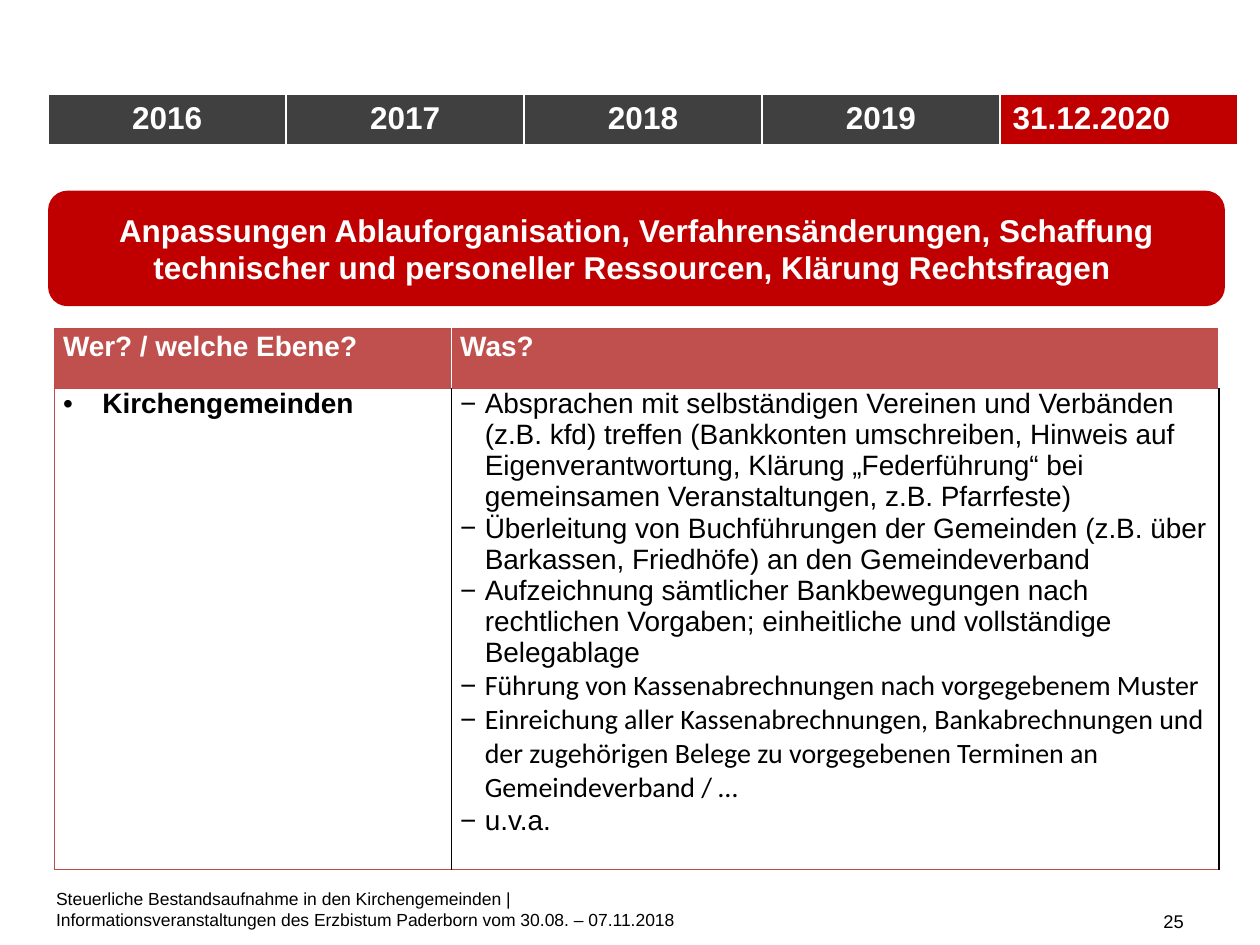
from lxml.etree import SubElement
from pptx import Presentation
from pptx.dml.color import RGBColor
from pptx.enum.shapes import MSO_SHAPE as Shape
from pptx.enum.text import MSO_ANCHOR as Anchor, PP_ALIGN as Align
from pptx.oxml import parse_xml
from pptx.oxml.ns import nsdecls, qn
from pptx.util import Pt

WHITE, BLACK, RED, GREY = "FFFFFF", "000000", "C00000", "404040"
HEADER_RED, RULE_RED = "C0504D", "BF4C48"

YEARS = ["2016", "2017", "2018", "2019", "31.12.2020"]
BANNER = ("Anpassungen Ablauforganisation, Verfahrensänderungen, Schaffung "
          "technischer und personeller Ressourcen, Klärung Rechtsfragen ")
HEADINGS = ["Wer? / welche Ebene?", "Was?"]
LEVEL = "Kirchengemeinden"
TASKS = [
    ("Absprachen mit selbständigen Vereinen und Verbänden (z.B. kfd) treffen "
     "(Bankkonten umschreiben, Hinweis auf Eigenverantwortung, Klärung „Federführung“ "
     "bei gemeinsamen Veranstaltungen, z.B. Pfarrfeste)", "Arial"),
    ("Überleitung von Buchführungen der Gemeinden (z.B. über Barkassen, Friedhöfe) "
     "an den Gemeindeverband", "Arial"),
    ("Aufzeichnung sämtlicher Bankbewegungen nach rechtlichen Vorgaben; "
     "einheitliche und vollständige Belegablage", "Arial"),
    ("Führung von Kassenabrechnungen nach vorgegebenem Muster", "Calibri"),
    ("Einreichung aller Kassenabrechnungen, Bankabrechnungen und der zugehörigen "
     "Belege zu vorgegebenen Terminen an Gemeindeverband / …", "Calibri"),
    ("u.v.a.", "Arial"),
]
FOOTER = ("Steuerliche Bestandsaufnahme in den Kirchengemeinden |\v"
          "Informationsveranstaltungen des Erzbistum Paderborn vom 30.08. – 07.11.2018")
PAGE = "25"


def rgb(value):
    return RGBColor.from_string(value)


def style(paragraph, size, color, bold=False, font="Arial", align=Align.LEFT):
    paragraph.alignment = align
    for run in paragraph.runs:
        run.font.name, run.font.size, run.font.bold = font, Pt(size), bold
        run.font.color.rgb = rgb(color)


def bullet(paragraph, char, indent):
    props = paragraph._p.get_or_add_pPr()
    props.set("marL", str(Pt(indent)))
    props.set("indent", str(-Pt(indent)))
    SubElement(props, qn("a:buFont"), typeface="Arial")
    SubElement(props, qn("a:buChar"), char=char)


def paint(cell, color, **borders):
    cell.fill.solid()
    cell.fill.fore_color.rgb = rgb(color)
    props = cell._tc.get_or_add_tcPr()
    for place, (side, (line, width)) in enumerate(borders.items()):
        props.insert(place, parse_xml(
            f'<a:ln{side} {nsdecls("a")} w="{Pt(width)}"><a:solidFill>'
            f'<a:srgbClr val="{line}"/></a:solidFill></a:ln{side}>'))


def pad(cell, bottom):
    cell.margin_left = cell.margin_right = Pt(5)
    cell.margin_top, cell.margin_bottom = Pt(0), Pt(bottom)


def add_table(slide, left, top, widths, heights):
    table = slide.shapes.add_table(
        len(heights), len(widths), Pt(left), Pt(top), Pt(sum(widths)), Pt(sum(heights))).table
    for column, width in zip(table.columns, widths):
        column.width = Pt(width)
    for row, height in zip(table.rows, heights):
        row.height = Pt(height)
    return table


def add_note(slide, text, box, size, align):
    frame = slide.shapes.add_textbox(*map(Pt, box)).text_frame
    frame.word_wrap = True
    frame.vertical_anchor = Anchor.BOTTOM
    frame.text = text
    style(frame.paragraphs[0], size, BLACK, align=align)


def add_timeline(slide):
    timeline = add_table(slide, 27.5, 54, [136] * len(YEARS), [29.5])
    edge = (WHITE, 1)
    for cell, year in zip(timeline.rows[0].cells, YEARS):
        final = year == YEARS[-1]
        cell.text = year
        style(cell.text_frame.paragraphs[0], 18, WHITE, True,
              align=Align.LEFT if final else Align.CENTER)
        paint(cell, RED if final else GREY, L=edge, R=edge, T=edge, B=(WHITE, 3))


def add_banner(slide):
    banner = slide.shapes.add_shape(
        Shape.ROUNDED_RECTANGLE, Pt(27.5), Pt(109), Pt(672.5), Pt(66))
    banner.shadow.inherit = False
    banner.fill.solid()
    banner.fill.fore_color.rgb = rgb(RED)
    banner.line.fill.background()
    frame = banner.text_frame
    frame.word_wrap = True
    frame.vertical_anchor = Anchor.MIDDLE
    frame.margin_left = frame.margin_right = Pt(12)
    frame.text = BANNER
    style(frame.paragraphs[0], 18, WHITE, True, align=Align.CENTER)


def add_duties(slide):
    duties = add_table(slide, 31, 188, [227, 438.5], [34, 275])
    red, white, black = (RULE_RED, 0.75), (WHITE, 1), (BLACK, 1)

    for cell, heading, left in zip(duties.rows[0].cells, HEADINGS, (red, white)):
        cell.text = heading
        pad(cell, 0)
        paragraph = cell.text_frame.paragraphs[0]
        paragraph.line_spacing = 1.07
        style(paragraph, 16, WHITE, True)
        paint(cell, HEADER_RED, L=left, R=white, T=red, B=red)

    level, tasks = duties.rows[1].cells
    for cell, left in ((level, red), (tasks, black)):
        pad(cell, 6)
        paint(cell, WHITE, L=left, R=black, T=red, B=red)

    level.text = LEVEL
    bullet(level.text_frame.paragraphs[0], "•", 22.5)
    style(level.text_frame.paragraphs[0], 16, BLACK, True)

    tasks.text = "\n".join(task for task, _ in TASKS)
    for paragraph, (_, font) in zip(tasks.text_frame.paragraphs, TASKS):
        bullet(paragraph, "−", 14)
        style(paragraph, 16, BLACK, font=font)


def main():
    deck = Presentation()
    deck.slide_width, deck.slide_height = Pt(720), Pt(540)
    slide = deck.slides.add_slide(deck.slide_layouts[6])
    add_note(slide, FOOTER, (25, 506, 449, 29), 10, Align.LEFT)
    add_note(slide, PAGE, (515.5, 507.5, 168, 29), 10.5, Align.RIGHT)
    add_duties(slide)
    add_banner(slide)
    add_timeline(slide)
    deck.save("out.pptx")


if __name__ == "__main__":
    main()
